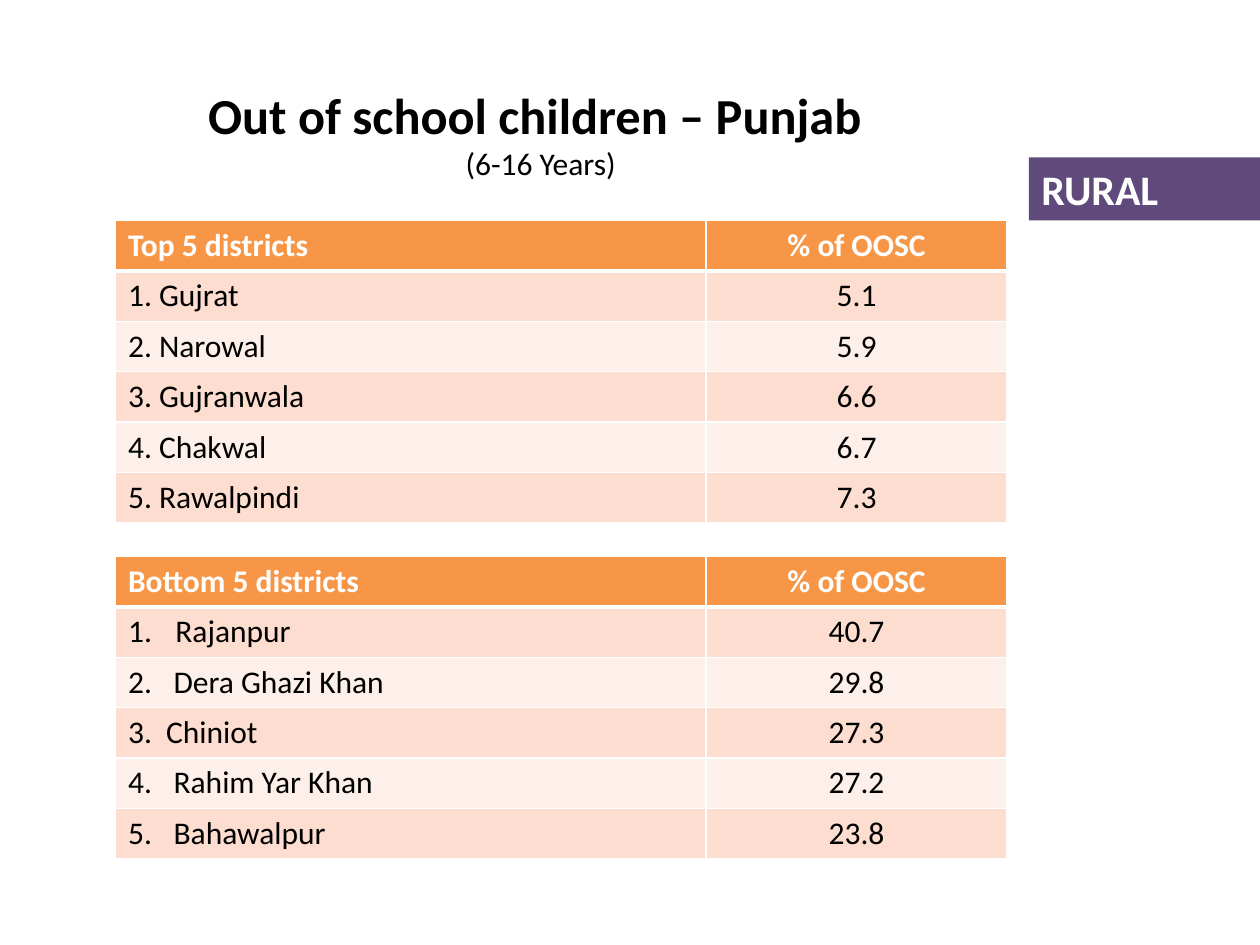
from pptx import Presentation
from pptx.dml.color import RGBColor
from pptx.enum.shapes import MSO_SHAPE
from pptx.enum.text import MSO_ANCHOR, MSO_AUTO_SIZE, PP_ALIGN
from pptx.oxml.ns import qn
from pptx.util import Pt
from lxml.etree import SubElement

FONT = "Calibri"
WHITE, BLACK, PURPLE, ORANGE = "FFFFFF", "000000", "604A7B", "F79646"
BANDS = ["FCDDCF", "FDEFE9"]

TITLE = "Out of school children – Punjab "
SUBTITLE = "(6-16 Years)"
TAG = "RURAL"
VALUE_HEADING = "% of OOSC"

# Heading, top, rows of (district, percentage, indent of the name after a tab)
TABLES = [
    ("Top 5 districts", 126, [
        ("1. Gujrat", "5.1", 0),
        ("2. Narowal", "5.9", 0),
        ("3. Gujranwala", "6.6", 0),
        ("4. Chakwal", "6.7", 0),
        ("5. Rawalpindi", "7.3", 0),
    ]),
    ("Bottom 5 districts", 318, [
        ("1.\tRajanpur", "40.7", 27),
        ("2.\tDera Ghazi Khan", "29.8", 26),
        ("3.\tChiniot", "27.3", 21.7),
        ("4.\tRahim Yar Khan", "27.2", 26),
        ("5.\tBahawalpur", "23.8", 26),
    ]),
]
TABLE_LEFT, COL_WIDTHS, ROW_HEIGHT = 66, [337.5, 172], 28.8


def rgb(value):
    return RGBColor.from_string(value)


def add_run(p, text, size, color, bold=False):
    r = p.add_run()
    r.text = text
    r.font.name, r.font.size, r.font.bold = FONT, Pt(size), bold
    r.font.color.rgb = rgb(color)


def set_borders(cell, bottom_width):
    """Draw white lines; they must precede the fill in the cell properties."""
    tc_pr = cell._tc.get_or_add_tcPr()
    for side, width in [("L", 1), ("R", 1), ("T", 1), ("B", bottom_width)]:
        ln = SubElement(tc_pr, qn(f"a:ln{side}"), w=str(Pt(width)))
        fill = SubElement(ln, qn("a:solidFill"))
        SubElement(fill, qn("a:srgbClr"), val=WHITE)


def set_hanging_tab(p, indent):
    p_pr = p._p.get_or_add_pPr()
    p_pr.set("marL", str(Pt(indent)))
    p_pr.set("indent", str(-Pt(indent)))
    tabs = SubElement(p_pr, qn("a:tabLst"))
    SubElement(tabs, qn("a:tab"), pos=str(Pt(indent)), algn="l")


def add_district_table(s, heading, top, districts):
    rows = [(heading, VALUE_HEADING, 0)] + districts
    table = s.shapes.add_table(
        len(rows), len(COL_WIDTHS), Pt(TABLE_LEFT), Pt(top),
        Pt(sum(COL_WIDTHS)), Pt(ROW_HEIGHT * len(rows))).table
    for column, width in zip(table.columns, COL_WIDTHS):
        column.width = Pt(width)
    for i, (name, value, indent) in enumerate(rows):
        header = i == 0
        table.rows[i].height = Pt(ROW_HEIGHT)
        for j, text in enumerate((name, value)):
            cell = table.cell(i, j)
            cell.margin_top = cell.margin_bottom = Pt(3.4)
            set_borders(cell, 3 if header else 1)
            cell.fill.solid()
            cell.fill.fore_color.rgb = rgb(ORANGE if header else BANDS[(i - 1) % 2])
            p = cell.text_frame.paragraphs[0]
            if j == 1:
                p.alignment = PP_ALIGN.CENTER
            elif indent:
                set_hanging_tab(p, indent)
            add_run(p, text, 18, WHITE if header else BLACK, header)


prs = Presentation()
prs.slide_width, prs.slide_height = Pt(720), Pt(540)
s = prs.slides.add_slide(prs.slide_layouts[5])

title = s.shapes.title
title.left, title.top, title.width, title.height = Pt(108), Pt(42), Pt(402), Pt(68)
tf = title.text_frame
tf.auto_size = MSO_AUTO_SIZE.NONE
tf.vertical_anchor = MSO_ANCHOR.MIDDLE
p = tf.paragraphs[0]
p.alignment = PP_ALIGN.CENTER
add_run(p, TITLE, 28.8, BLACK, True)
p.add_line_break()
add_run(p, SUBTITLE, 18, BLACK)

tag = s.shapes.add_shape(MSO_SHAPE.RECTANGLE, Pt(588), Pt(90), Pt(132), Pt(36))
tag.shadow.inherit = False
tag.fill.solid()
tag.fill.fore_color.rgb = rgb(PURPLE)
tag.line.fill.background()
tf = tag.text_frame
tf.vertical_anchor = MSO_ANCHOR.TOP
p = tf.paragraphs[0]
p.alignment = PP_ALIGN.LEFT
add_run(p, TAG, 24, WHITE, True)

for heading, top, districts in TABLES:
    add_district_table(s, heading, top, districts)

prs.save("out.pptx")
